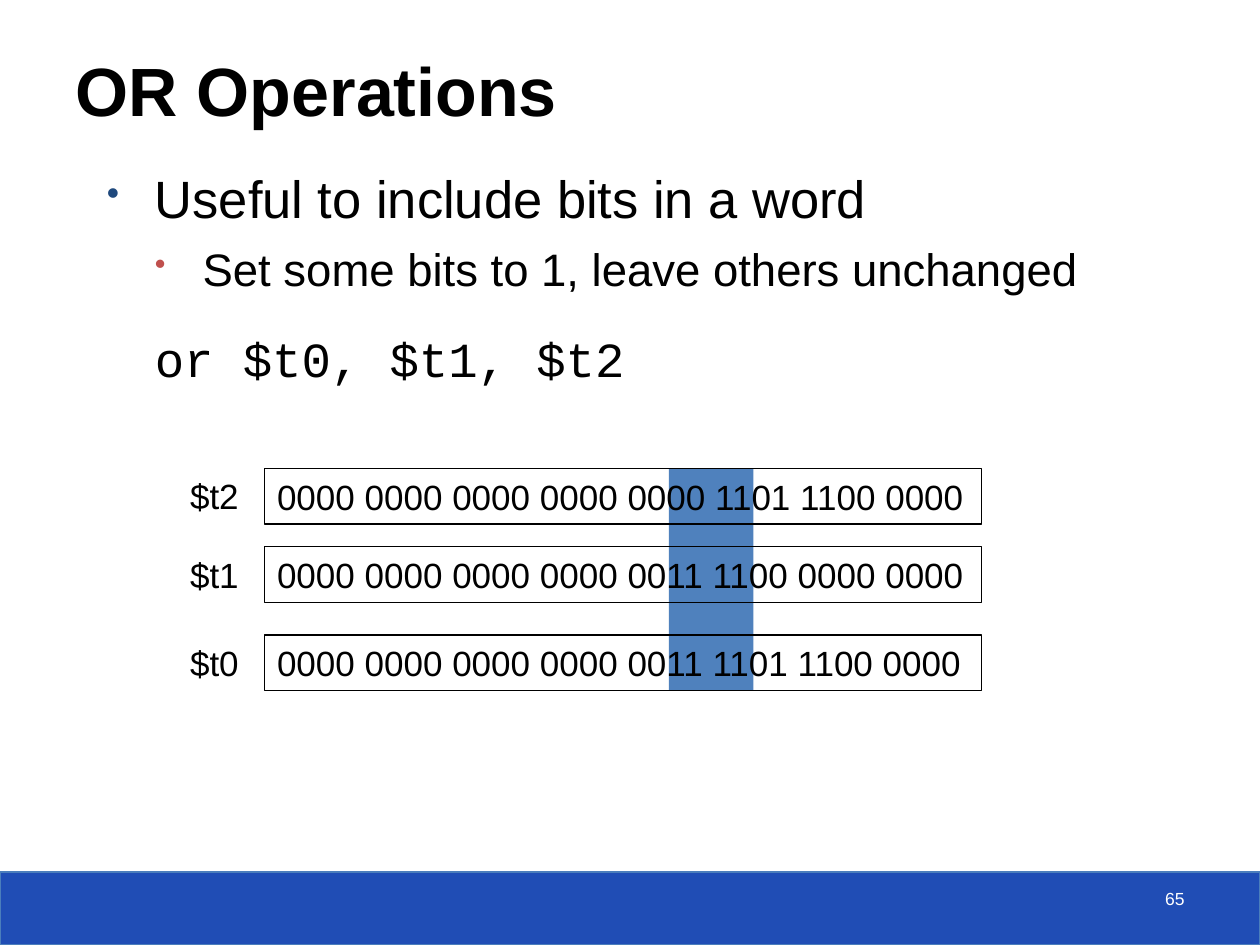
from lxml import etree
from pptx import Presentation
from pptx.dml.color import RGBColor
from pptx.enum.shapes import MSO_SHAPE
from pptx.enum.text import MSO_ANCHOR, MSO_AUTO_SIZE, PP_ALIGN
from pptx.oxml.ns import qn
from pptx.util import Inches, Pt

RECTANGLE = MSO_SHAPE.RECTANGLE
BOTTOM = MSO_ANCHOR.BOTTOM
NO_FIT = MSO_AUTO_SIZE.NONE
LEFT, RIGHT = PP_ALIGN.LEFT, PP_ALIGN.RIGHT

WIDTH, HEIGHT = 10, 7.5
BLACK, WHITE = "000000", "FFFFFF"
INDENT = 0.38

TITLE = "OR Operations"
PAGE_NUMBER = "65"
POINTS = [
    {"text": "Useful to include bits in a word", "level": 0, "bullet": "1F497D",
     "size": 30, "font": "Arial", "before": 0, "after": 0},
    {"text": "Set some bits to 1, leave others unchanged", "level": 1, "bullet": "C0504D",
     "size": 26, "font": "Arial", "before": 6.5, "after": 0},
    {"text": "or $t0, $t1, $t2", "level": 0, "bullet": None,
     "size": 28, "font": "Courier New", "before": 19, "after": 8},
]
REGISTERS = [
    ("$t2", "0000 0000 0000 0000 0000 1101 1100 0000", 3.72),
    ("$t1", "0000 0000 0000 0000 0011 1100 0000 0000", 4.34),
    ("$t0", "0000 0000 0000 0000 0011 1101 1100 0000", 5.04),
]
LABEL_LEFT, LABEL_WIDTH = 1.41, 0.59
WORD_LEFT, WORD_WIDTH, ROW_HEIGHT = 2.1, 5.69, 0.44
MASK_LEFT, MASK_WIDTH = 5.31, 0.67
BAND_HEIGHT = 0.58


def color(value):
    return RGBColor.from_string(value)


def box(*lengths):
    return [Inches(length) for length in lengths]


def write(paragraph, text, size, font="Arial", ink=BLACK, bold=False, align=LEFT):
    paragraph.text = text
    paragraph.alignment = align
    formats = {"size": Pt(size), "name": font, "bold": bold}
    for key, value in formats.items():
        setattr(paragraph.font, key, value)
    paragraph.font.color.rgb = color(ink)


def add_rectangle(slide, place, fill=None, line=None):
    rectangle = slide.shapes.add_shape(RECTANGLE, *box(*place))
    rectangle.shadow.inherit = False
    if fill:
        rectangle.fill.solid()
        rectangle.fill.fore_color.rgb = color(fill)
    else:
        rectangle.fill.background()
    if line:
        rectangle.line.color.rgb = color(line)
        rectangle.line.width = Pt(0.75)
    else:
        rectangle.line.fill.background()
    return rectangle


def add_title(slide):
    title = slide.shapes.title
    title.left, title.top, title.width, title.height = box(0.5, 0.25, 9.29, 0.83)
    title.text_frame.auto_size = NO_FIT
    title.text_frame.vertical_anchor = BOTTOM
    write(title.text_frame.paragraphs[0], TITLE, 39, bold=True)


def set_bullet(paragraph, level, ink):
    properties = paragraph._p.get_or_add_pPr()
    properties.set("marL", str(Inches(INDENT * (level + 1))))
    properties.set("indent", str(-Inches(INDENT) if ink else 0))
    if ink:
        bullet_color = etree.SubElement(properties, qn("a:buClr"))
        etree.SubElement(bullet_color, qn("a:srgbClr"), val=ink)
        etree.SubElement(properties, qn("a:buSzPct"), val="70000")
        etree.SubElement(properties, qn("a:buChar"), char="•")
    else:
        etree.SubElement(properties, qn("a:buNone"))


def add_points(slide):
    frame = slide.shapes.add_textbox(*box(0.75, 1.23, 9.05, 2.27)).text_frame
    frame.word_wrap = True
    frame.margin_top = Inches(0.09)
    for index, point in enumerate(POINTS):
        paragraph = frame.add_paragraph() if index else frame.paragraphs[0]
        paragraph.level = point["level"]
        paragraph.space_before = Pt(point["before"])
        paragraph.space_after = Pt(point["after"])
        set_bullet(paragraph, point["level"], point["bullet"])
        write(paragraph, point["text"], point["size"], point["font"])


def add_registers(slide):
    first_top, last_top = REGISTERS[0][2], REGISTERS[-1][2]
    mask_height = last_top + ROW_HEIGHT - first_top
    add_rectangle(slide, (MASK_LEFT, first_top, MASK_WIDTH, mask_height), "4F81BD")
    for register, bits, top in REGISTERS:
        word = add_rectangle(slide, (WORD_LEFT, top, WORD_WIDTH, ROW_HEIGHT), line=BLACK)
        label = slide.shapes.add_textbox(*box(LABEL_LEFT, top, LABEL_WIDTH, ROW_HEIGHT))
        for holder, text in ((word, bits), (label, register)):
            holder.text_frame.word_wrap = False
            write(holder.text_frame.paragraphs[0], text, 20)


def add_footer(slide):
    add_rectangle(slide, (0, HEIGHT - BAND_HEIGHT, WIDTH, BAND_HEIGHT), "204DB5", "4B7EBC")
    number = slide.shapes.add_textbox(*box(7.17, 7, 2.33, 0.33)).text_frame
    number.word_wrap = True
    write(number.paragraphs[0], PAGE_NUMBER, 10, ink=WHITE, align=RIGHT)


def main():
    deck = Presentation()
    deck.slide_width, deck.slide_height = box(WIDTH, HEIGHT)
    slide = deck.slides.add_slide(deck.slide_layouts.get_by_name("Title Only"))
    for add_part in (add_title, add_points, add_registers, add_footer):
        add_part(slide)
    deck.save("out.pptx")


if __name__ == "__main__":
    main()
